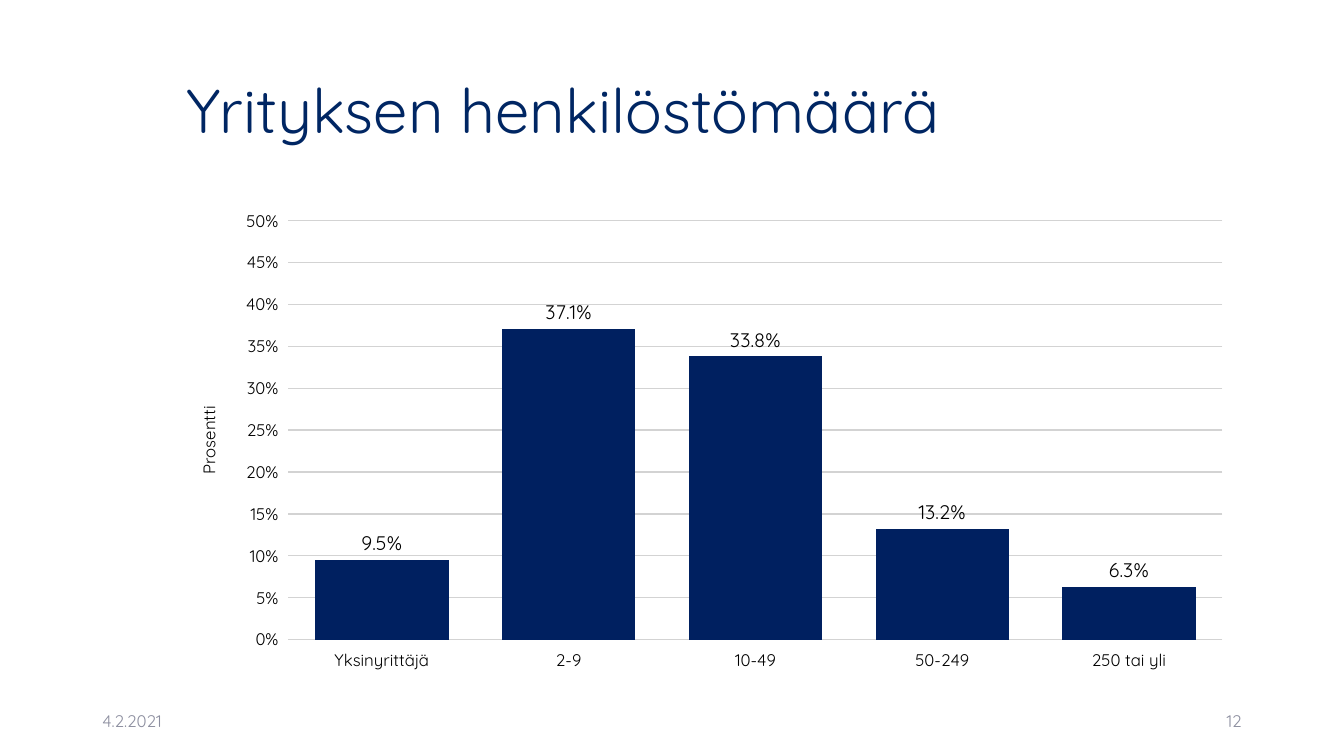
from lxml import etree
from pptx import Presentation
from pptx.chart.data import CategoryChartData
from pptx.dml.color import RGBColor
from pptx.enum.chart import XL_CHART_TYPE, XL_LABEL_POSITION, XL_TICK_MARK
from pptx.enum.text import MSO_ANCHOR, PP_ALIGN
from pptx.oxml.ns import qn
from pptx.util import Pt

COLUMNS = XL_CHART_TYPE.COLUMN_CLUSTERED
OUTSIDE_END = XL_LABEL_POSITION.OUTSIDE_END
TICK_OUT = XL_TICK_MARK.OUTSIDE
MIDDLE = MSO_ANCHOR.MIDDLE
LEFT = PP_ALIGN.LEFT
RIGHT = PP_ALIGN.RIGHT

FONT = "Quicksand"
BLACK = "000000"
TITLE_BLUE = "002663"
BAR_BLUE = "002060"
FOOTER_GREY = "8C8E9F"
GRID_GREY = "D3D3D3"
WHITE = "FFFFFF"

STAFF_SHARES = {
    "Yksinyrittäjä": 0.095,
    "2-9": 0.371,
    "10-49": 0.338,
    "50-249": 0.132,
    "250 tai yli": 0.063,
}
PLOT_LAYOUT = {"x": 0.105, "y": 0.04, "w": 0.875, "h": 0.873}


def color(hex_code):
    return RGBColor.from_string(hex_code)


def style_font(font, size, hex_code):
    font.name = FONT
    font.size = Pt(size)
    font.bold = False
    font.color.rgb = color(hex_code)


def add_title(slide, left, top, width, height):
    heading = slide.shapes.title
    heading.left, heading.top = Pt(left), Pt(top)
    heading.width, heading.height = Pt(width), Pt(height)
    frame = heading.text_frame
    frame.text = "Yrityksen henkilöstömäärä"
    frame.word_wrap = True
    frame.vertical_anchor = MIDDLE
    paragraph = frame.paragraphs[0]
    paragraph.alignment = LEFT
    paragraph.line_spacing = 0.9
    style_font(paragraph.runs[0].font, 44, TITLE_BLUE)


def add_footer_text(slide, text, alignment, left, top, width, height):
    footer = slide.shapes.add_textbox(Pt(left), Pt(top), Pt(width), Pt(height))
    frame = footer.text_frame
    frame.text = text
    frame.word_wrap = True
    frame.vertical_anchor = MIDDLE
    paragraph = frame.paragraphs[0]
    paragraph.alignment = alignment
    style_font(paragraph.runs[0].font, 12, FOOTER_GREY)


def add_footer(slide, left, top, width, height):
    part_width = 216
    add_footer_text(slide, "4.2.2021", LEFT, left, top, part_width, height)
    add_footer_text(slide, "12", RIGHT, left + width - part_width, top,
                    part_width, height)


def format_plot_area(chart):
    plot_area = chart.plots[0]._element.getparent()
    for old_layout in plot_area.findall(qn("c:layout")):
        plot_area.remove(old_layout)
    layout = etree.Element(qn("c:layout"))
    manual = etree.SubElement(layout, qn("c:manualLayout"))
    settings = {"layoutTarget": "inner", "xMode": "edge", "yMode": "edge"}
    for tag, value in {**settings, **PLOT_LAYOUT}.items():
        etree.SubElement(manual, qn(f"c:{tag}")).set("val", str(value))
    plot_area.insert(0, layout)
    properties = etree.SubElement(plot_area, qn("c:spPr"))
    fill = etree.SubElement(properties, qn("a:solidFill"))
    etree.SubElement(fill, qn("a:srgbClr")).set("val", WHITE)


def format_axes(chart):
    for axis in (chart.category_axis, chart.value_axis):
        axis.major_tick_mark = TICK_OUT
        axis.format.line.fill.background()
        style_font(axis.tick_labels.font, 12, BLACK)
    shares = chart.value_axis
    shares.minimum_scale, shares.maximum_scale = 0, 0.5
    shares.major_unit = 0.05
    shares.tick_labels.number_format = "0%"
    shares.tick_labels.number_format_is_linked = False
    shares.has_major_gridlines = True
    gridline = shares.major_gridlines.format.line
    gridline.width = Pt(1)
    gridline.color.rgb = color(GRID_GREY)
    caption = shares.axis_title.text_frame
    caption.text = "Prosentti"
    style_font(caption.paragraphs[0].runs[0].font, 12, BLACK)


def format_bars(plot):
    plot.gap_width = 40
    plot.vary_by_categories = False
    bars = plot.series[0]
    bars.format.fill.solid()
    bars.format.fill.fore_color.rgb = color(BAR_BLUE)
    labels = bars.data_labels
    labels.show_value = True
    labels.position = OUTSIDE_END
    labels.number_format = "0.0%"
    labels.number_format_is_linked = False
    style_font(labels.font, 14, BLACK)


def add_staff_chart(slide, left, top, width, height):
    data = CategoryChartData(number_format="0.0%")
    data.categories = list(STAFF_SHARES)
    data.add_series("Series 1", list(STAFF_SHARES.values()))
    chart = slide.shapes.add_chart(
        COLUMNS, Pt(left), Pt(top), Pt(width), Pt(height), data).chart
    chart.has_title = False
    chart.has_legend = False
    style_font(chart.font, 11, BLACK)
    format_axes(chart)
    format_bars(chart.plots[0])
    format_plot_area(chart)


def main():
    deck = Presentation()
    deck.slide_width, deck.slide_height = Pt(960), Pt(540)
    slide = deck.slides.add_slide(deck.slide_layouts[5])
    content_left, content_width = 126, 762.5
    add_title(slide, content_left, 28.8, content_width, 104.4)
    add_staff_chart(slide, content_left, 144, content_width, 342.7)
    add_footer(slide, 66, 500.5, 828, 28.8)
    deck.save("out.pptx")


if __name__ == "__main__":
    main()
